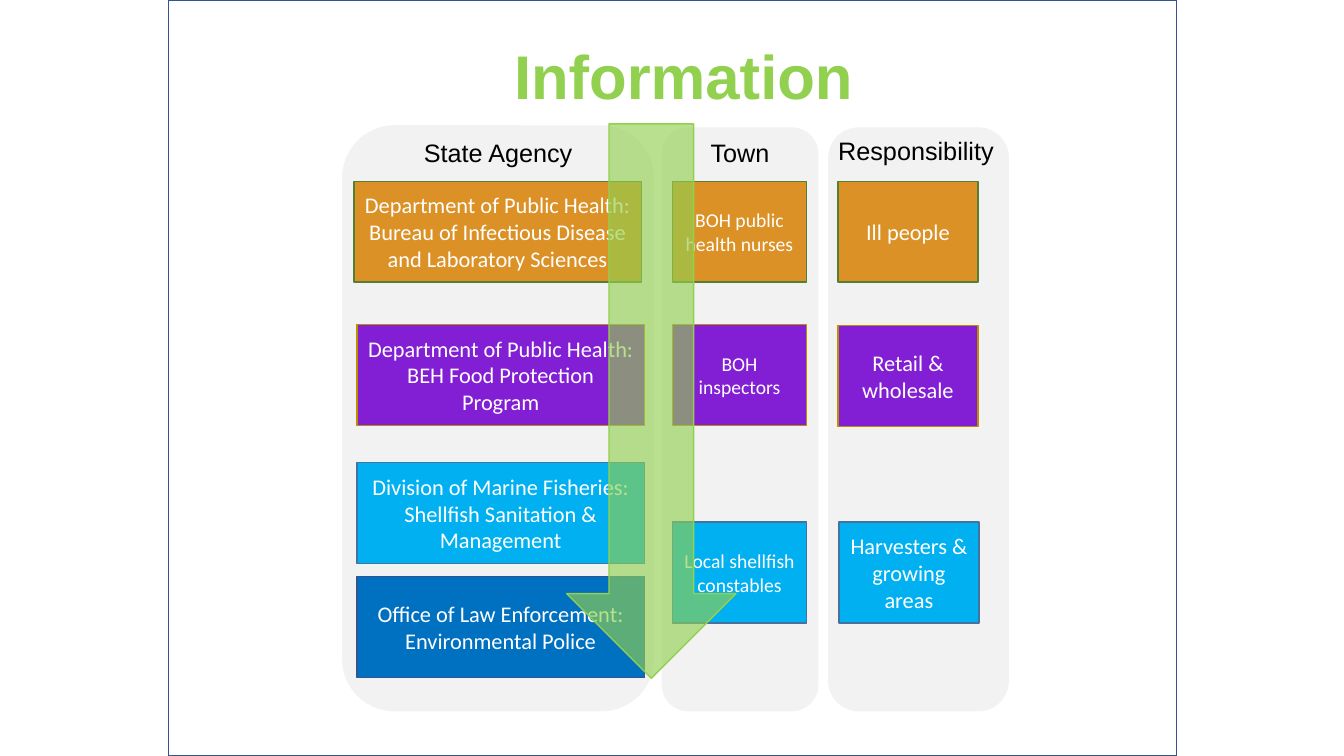
import pptx
import pptx.dml.color
import pptx.enum.shapes
import pptx.enum.text
import pptx.oxml
import pptx.oxml.ns
import pptx.util

PX = 9144  # 100 px to the inch
SHAPES = pptx.enum.shapes.MSO_SHAPE
ALIGN = pptx.enum.text.PP_ALIGN

GREEN = "92D050"
PANEL = "F2F2F2"
CARD_HEIGHT = 100

# Fill and outline of each programme's cards
ILLNESS = ("DB9125", "538035")
FOOD = ("821ED4", "BD8E00")
SHELLFISH = ("00B0F0", "43739E")
POLICE = ("0070C0", "325491")


def color(value):
    return pptx.dml.color.RGBColor.from_string(value)


def scaled(box):
    return [length * PX for length in box]


def write(frame, text, size=16, font="Calibri", fill="FFFFFF", bold=False,
          align=ALIGN.CENTER, wrap=True):
    frame.word_wrap = wrap
    para = frame.paragraphs[0]
    para.alignment = align
    span = para.add_run()
    span.text = text
    span.font.size = pptx.util.Pt(size)
    span.font.name = font
    span.font.bold = bold
    span.font.color.rgb = color(fill)


def add_shape(page, kind, box, fill, line):
    shape = page.shapes.add_shape(kind, *scaled(box))
    shape.shadow.inherit = False
    shape.fill.solid()
    shape.fill.fore_color.rgb = color(fill)
    shape.line.color.rgb = color(line)
    shape.line.width = pptx.util.Pt(1)
    return shape


def add_label(page, box, text, **style):
    label = page.shapes.add_textbox(*scaled(box))
    write(label.text_frame, text, **style)
    label.text_frame.auto_size = pptx.enum.text.MSO_AUTO_SIZE.SHAPE_TO_FIT_TEXT


def add_column(page, box, heading, heading_box, card_width, size, cards):
    """Panel with a heading and cards; inner places are relative to the panel."""
    left, top, width, height = box
    add_shape(page, SHAPES.FLOWCHART_ALTERNATE_PROCESS, box, PANEL, PANEL)
    for x, y, (fill, line), text in cards:
        card = add_shape(page, SHAPES.RECTANGLE,
                         (left + x, top + y, card_width, CARD_HEIGHT), fill, line)
        card.text_frame.vertical_anchor = pptx.enum.text.MSO_ANCHOR.MIDDLE
        write(card.text_frame, text, size=size)
    x, y, label_width, label_height = heading_box
    add_label(page, (left + x, top + y, label_width, label_height), heading,
              size=18, font="Arial", fill="000000")


def add_flow_arrow(page, box):
    arrow = add_shape(page, SHAPES.DOWN_ARROW, box, GREEN, GREEN)
    tint = arrow.fill._xPr.find(".//" + pptx.oxml.ns.qn("a:srgbClr"))
    tint.append(pptx.oxml.parse_xml(
        '<a:alpha %s val="64000"/>' % pptx.oxml.ns.nsdecls("a")))


def build_page(page):
    # Framed page area
    add_shape(page, SHAPES.RECTANGLE, (167, 0, 1000, 750), "FFFFFF", "325491")

    # Columns
    add_column(page, (340, 125, 308, 580), "State Agency", (0, 6, 308, 40), 285, 16, [
        (11, 55, ILLNESS, "Department of Public Health: Bureau of Infectious "
                          "Disease and Laboratory Sciences"),
        (14, 197, FOOD, "Department of Public Health: BEH Food Protection Program"),
        (14, 334, SHELLFISH, "Division of Marine Fisheries: Shellfish Sanitation "
                             "& Management"),
        (14, 447, POLICE, "Office of Law Enforcement: Environmental Police"),
    ])
    add_column(page, (657, 127, 154, 578), "Town", (5, 4, 144, 40), 133, 14, [
        (10, 53, ILLNESS, "BOH public health nurses"),
        (10, 195, FOOD, "BOH inspectors"),
        (10, 391, SHELLFISH, "Local shellfish constables"),
    ])
    add_column(page, (822, 127, 178, 578), "Responsibility", (-5, 2, 183, 40), 139, 16, [
        (9, 53, ILLNESS, "Ill people"),
        (9, 196, FOOD, "Retail & wholesale"),
        (10, 391, SHELLFISH, "Harvesters & growing areas"),
    ])

    # Arrow across the columns, and the title
    add_flow_arrow(page, (562, 123, 168, 550))
    add_label(page, (500, 33, 360, 84), "Information", size=44, font="Arial",
              fill=GREEN, bold=True, align=ALIGN.LEFT, wrap=False)


def main():
    deck = pptx.Presentation()
    deck.slide_width, deck.slide_height = scaled((1333, 750))
    build_page(deck.slides.add_slide(deck.slide_layouts[6]))
    deck.save("out.pptx")


if __name__ == "__main__":
    main()
